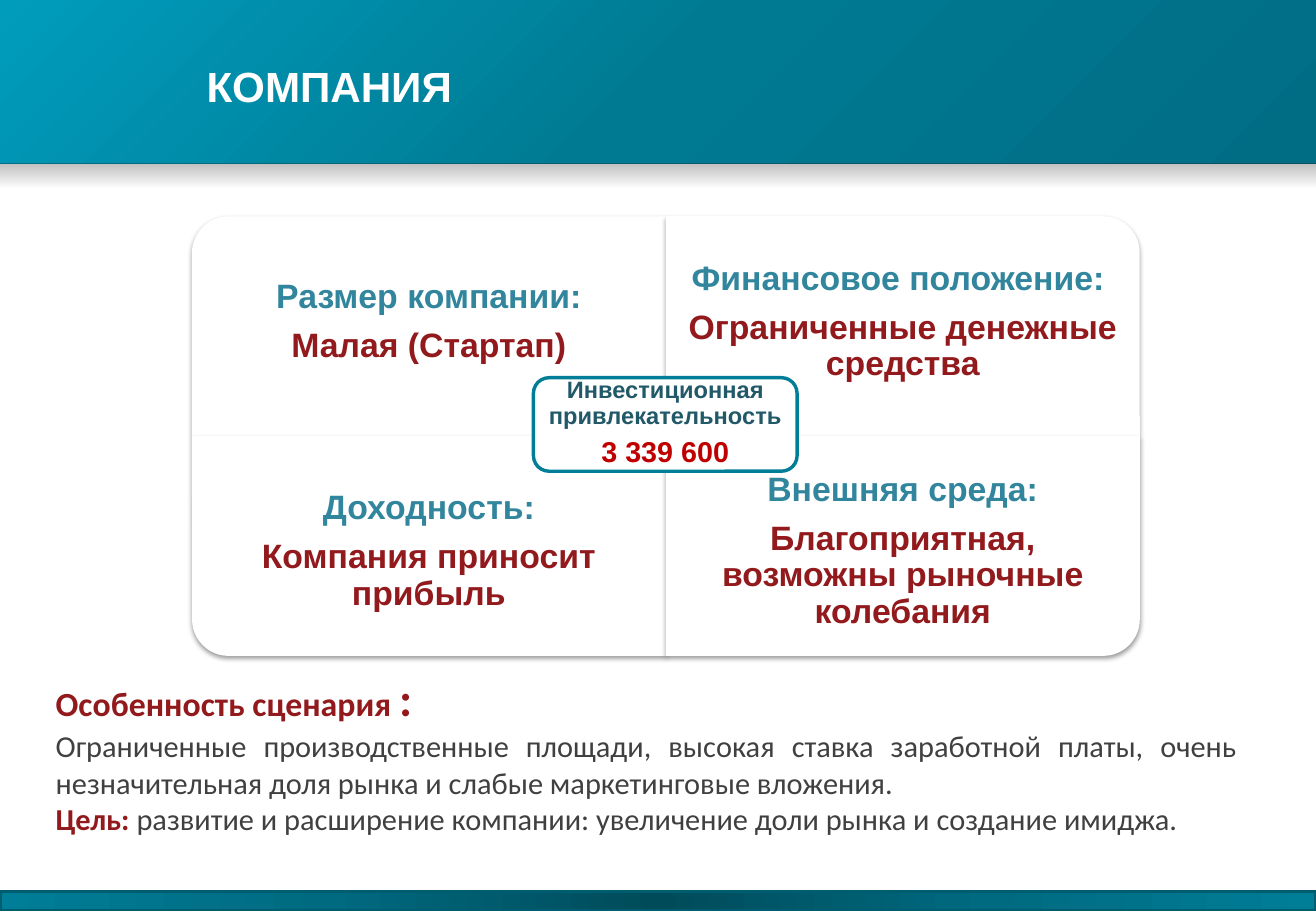
import pptx
import pptx.util
import pptx.dml.color
import pptx.enum.shapes
import pptx.enum.text
import pptx.oxml
import pptx.oxml.ns

Inches, Pt = pptx.util.Inches, pptx.util.Pt
Shape = pptx.enum.shapes.MSO_SHAPE
Align = pptx.enum.text.PP_ALIGN
Anchor = pptx.enum.text.MSO_ANCHOR
NS = pptx.oxml.ns.nsdecls("a")


def color(code):
    return pptx.dml.color.RGBColor.from_string(code)


def run(text, size=18, font="Arial", ink="404040", bold=True):
    return dict(text=text, size=size, font=font, ink=ink, bold=bold)


class Deck:
    RED, TEAL, EDGE = "921A1D", "31859C", "007E98"

    def __init__(self, wide, high):
        self.file = pptx.Presentation()
        self.file.slide_width = Inches(wide)
        self.file.slide_height = Inches(high)
        self.slide = self.file.slides.add_slide(self.file.slide_layouts[6])

    def shape(self, kind, box, fill="FFFFFF", line=None, turn=0):
        item = self.slide.shapes.add_shape(kind, *map(Inches, box))
        item.shadow.inherit = False
        item.rotation = turn
        item.fill.solid()
        item.fill.fore_color.rgb = color(fill)
        if line:
            item.line.color.rgb = color(line)
            item.line.width = Pt(2)
        else:
            item.line.fill.background()
        return item

    def band(self, box, stops, way, line=None):
        """Bar with gradient stops of (percent, colour, opacity)."""
        item = self.shape(Shape.RECTANGLE, box, line=line)
        marks = "".join(
            f'<a:gs pos="{at * 1000}"><a:srgbClr val="{ink}">'
            f'<a:alpha val="{alpha * 1000}"/></a:srgbClr></a:gs>'
            for at, ink, alpha in stops)
        grad = pptx.oxml.parse_xml(
            f'<a:gradFill {NS} rotWithShape="1"><a:gsLst>{marks}</a:gsLst>{way}</a:gradFill>')
        props = item._element.spPr
        props.replace(props.find(pptx.oxml.ns.qn("a:solidFill")), grad)

    def petal(self, mid, size, turn):
        """Card with one round corner, turned about its middle."""
        wide, high = size[::-1] if turn % 180 else size
        box = (mid[0] - wide / 2, mid[1] - high / 2, wide, high)
        item = self.shape(Shape.ROUND_1_RECTANGLE, box, turn=turn)
        glow = item._element.spPr.find(pptx.oxml.ns.qn("a:effectLst"))
        glow.append(pptx.oxml.parse_xml(
            f'<a:outerShdw {NS} blurRad="{Pt(3.1)}" dist="{Pt(1.6)}" dir="5400000" '
            'rotWithShape="0"><a:srgbClr val="000000"><a:alpha val="38000"/>'
            '</a:srgbClr></a:outerShdw>'))

    def text(self, box, paras, align=Align.LEFT, pads=(0.1, 0.05),
             anchor=Anchor.TOP, lead=None, gap=0):
        frame = self.slide.shapes.add_textbox(*map(Inches, box)).text_frame
        frame.word_wrap = True
        frame.vertical_anchor = anchor
        frame.margin_left = frame.margin_right = Inches(pads[0])
        frame.margin_top = frame.margin_bottom = Inches(pads[1])
        for num, runs in enumerate(paras):
            para = frame.add_paragraph() if num else frame.paragraphs[0]
            para.alignment = align
            if lead:
                para.line_spacing = lead
            if num:
                para.space_before = Pt(gap)
            for spec in runs:
                part = para.add_run()
                part.text = spec["text"]
                part.font.size = Pt(spec["size"])
                part.font.name = spec["font"]
                part.font.bold = spec["bold"]
                part.font.color.rgb = color(spec["ink"])

    def label(self, box, paras, pad, gap):
        self.text(box, paras, Align.CENTER, (pad, pad), Anchor.MIDDLE, 0.9, gap)


def main():
    deck = Deck(10.83, 7.5)

    # Header, its shade and the footer
    deck.band((0, 0, 10.83, 1.35),
              [(0, "006D84", 100), (50, "007A93", 100), (100, "009CBC", 100)],
              '<a:lin ang="13500000" scaled="0"/>')
    deck.band((0, 1.35, 10.83, 0.19), [(0, "000000", 26), (100, "000000", 0)],
              '<a:lin ang="5400000" scaled="0"/>')
    deck.band((0, 7.34, 10.83, 0.16),
              [(0, "004B5A", 100), (50, "006A80", 100), (100, "007E98", 100)],
              '<a:path path="circle"><a:fillToRect l="50000" t="50000" '
              'r="50000" b="50000"/></a:path>', line="005D70")
    deck.text((1.7, 0.45, 7.43, 0.51), [[run("КОМПАНИЯ", 25, ink="FFFFFF")]],
              pads=(0, 0.05))

    # Matrix of four cards
    left, top, wide, high = 1.58, 1.78, 3.9, 1.81
    cards = [("Размер компании:", "Малая (Стартап)", 270),
             ("Финансовое положение: ", "Ограниченные денежные средства", 0),
             ("Доходность:", "Компания приносит прибыль", 180),
             ("Внешняя среда:", "Благоприятная, возможны рыночные колебания", 90)]
    for num, (head, fact, turn) in enumerate(cards):
        row, col = divmod(num, 2)
        x, y = left + col * wide, top + row * high
        deck.petal((x + wide / 2, y + high / 2), (wide, high), turn)
        deck.label((x, 1.97 + row * 1.89, wide, 1.36),
                   [[run(head, 20, ink=deck.TEAL)], [run(fact, 20, ink=deck.RED)]],
                   0.16, 7.5)

    # Centre badge
    deck.shape(Shape.ROUNDED_RECTANGLE, (4.39, 3.11, 2.17, 0.77), line=deck.EDGE)
    deck.label((4.43, 3.14, 2.09, 0.69),
               [[run("Инвестиционная привлекательность", 14, ink="215968")],
                [run("3 339 600", 17, ink="C00000")]], 0.06, 5)

    # Scenario notes
    deck.text((0.36, 5.46, 4.9, 0.57),
              [[run("Особенность сценария ", 20, "Calibri", deck.RED),
                run(":", 28, "Calibri", deck.RED)]])
    deck.text((0.36, 5.94, 9.92, 1.3),
              [[run("Ограниченные производственные площади, высокая ставка заработной "
                    "платы, очень незначительная доля рынка и слабые маркетинговые "
                    "вложения.", font="Calibri", bold=False)],
               [run("Цель: ", font="Calibri", ink=deck.RED),
                run("развитие и расширение компании: увеличение доли рынка и "
                    "создание имиджа.", font="Calibri", bold=False)]],
              Align.JUSTIFY)

    deck.file.save("out.pptx")


if __name__ == "__main__":
    main()
